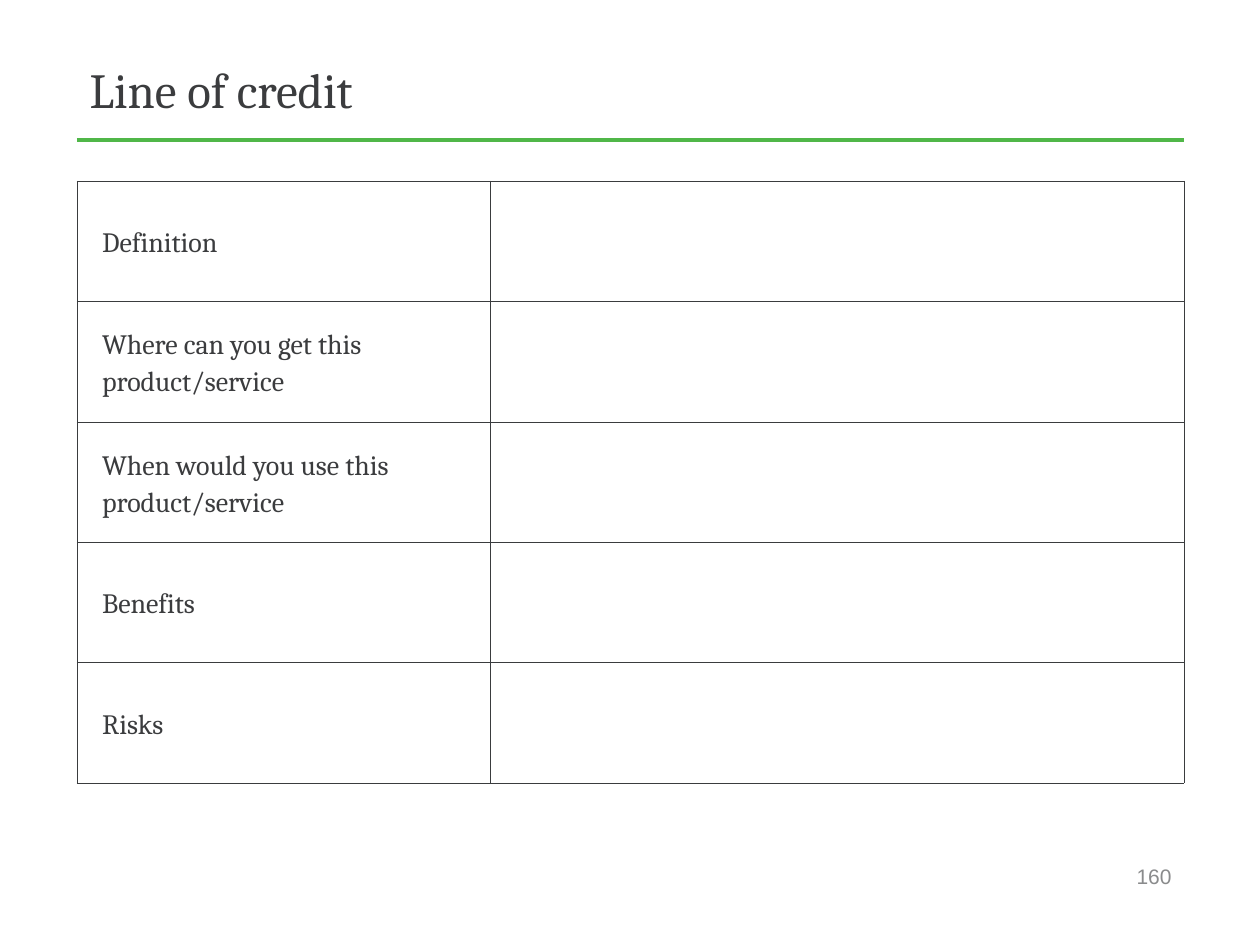
from lxml import etree
from pptx import Presentation
from pptx import util as u
from pptx.dml.color import RGBColor
from pptx.enum import shapes, text
from pptx.oxml.ns import qn

PX = u.Inches(1) // 126
INK = RGBColor(0x3B, 0x3C, 0x3E)
BORDER = RGBColor(0x3A, 0x3C, 0x3E)
GREEN = RGBColor(0x50, 0xB7, 0x48)
GREY = RGBColor(0x8A, 0x8B, 0x8C)
SERIF, SANS = "Cambria", "Arial"

LEFT, WIDTH = 77, 1107
QUESTIONS = [
    "Definition",
    "Where can you get this product/service",
    "When would you use this product/service",
    "Benefits",
    "Risks",
]


def px(*lengths):
    return [length * PX for length in lengths]


class SlideBuilder:
    """Holds the current slide and the style shared by its elements."""

    def __init__(self, slide):
        self.slide = slide

    def format_text(self, frame, size, font, color, align):
        frame.word_wrap = True
        frame.vertical_anchor = text.MSO_ANCHOR.MIDDLE
        for paragraph in frame.paragraphs:
            paragraph.alignment = align
            for run in paragraph.runs:
                run.font.size = u.Pt(size)
                run.font.name = font
                run.font.color.rgb = color

    def title(self, wording, left, top, width, height):
        title = self.slide.shapes.title
        title.left, title.top, title.width, title.height = px(left, top, width, height)
        title.text_frame.text = wording
        title.text_frame.auto_size = text.MSO_AUTO_SIZE.NONE
        self.format_text(title.text_frame, 28, SERIF, INK, text.PP_ALIGN.LEFT)

    def rule(self, left, right, y):
        rule = self.slide.shapes.add_connector(
            shapes.MSO_CONNECTOR.STRAIGHT, *px(left, y, right, y))
        rule.line.color.rgb = GREEN
        rule.line.width = u.Pt(2)
        etree.SubElement(rule._element.spPr, qn("a:effectLst"))

    def page_number(self, number, left, top, width, height):
        box = self.slide.shapes.add_textbox(*px(left, top, width, height))
        box.text_frame.text = number
        self.format_text(box.text_frame, 12, SANS, GREY, text.PP_ALIGN.RIGHT)

    def border(self, cell):
        properties = cell._tc.get_or_add_tcPr()
        for side in ("lnL", "lnR", "lnT", "lnB"):
            line = etree.SubElement(properties, qn(f"a:{side}"), w=str(u.Pt(0.25)))
            fill = etree.SubElement(line, qn("a:solidFill"))
            etree.SubElement(fill, qn("a:srgbClr"), val=str(BORDER))

    def question_table(self, questions, left, top, column_widths, height):
        """Draw questions in the first column and leave the answers blank."""
        table = self.slide.shapes.add_table(
            len(questions), len(column_widths),
            *px(left, top, sum(column_widths), height)).table
        table.first_row = table.horz_banding = False
        for column, width in zip(table.columns, px(*column_widths)):
            column.width = width
        for cell in table.iter_cells():
            self.border(cell)
            cell.fill.background()
        for row, question in enumerate(questions):
            cell = table.cell(row, 0)
            cell.text_frame.text = question
            cell.margin_left = u.Inches(0.2)
            cell.vertical_anchor = text.MSO_ANCHOR.MIDDLE
            paragraph = cell.text_frame.paragraphs[0]
            paragraph.line_spacing = 1.15
            font = paragraph.runs[0].font
            font.size, font.name = u.Pt(16), SERIF
            font.color.rgb = INK


def main():
    deck = Presentation()
    deck.slide_width, deck.slide_height = u.Inches(10), u.Inches(7.5)
    builder = SlideBuilder(deck.slides.add_slide(deck.slide_layouts[5]))
    builder.rule(LEFT, LEFT + WIDTH, 140)
    builder.title("Line of credit", LEFT, 38, WIDTH, 102)
    builder.page_number("160", 785, 851, 399, 50)
    builder.question_table(QUESTIONS, LEFT, 181, [413, 694], 602)
    deck.save("out.pptx")


if __name__ == "__main__":
    main()
